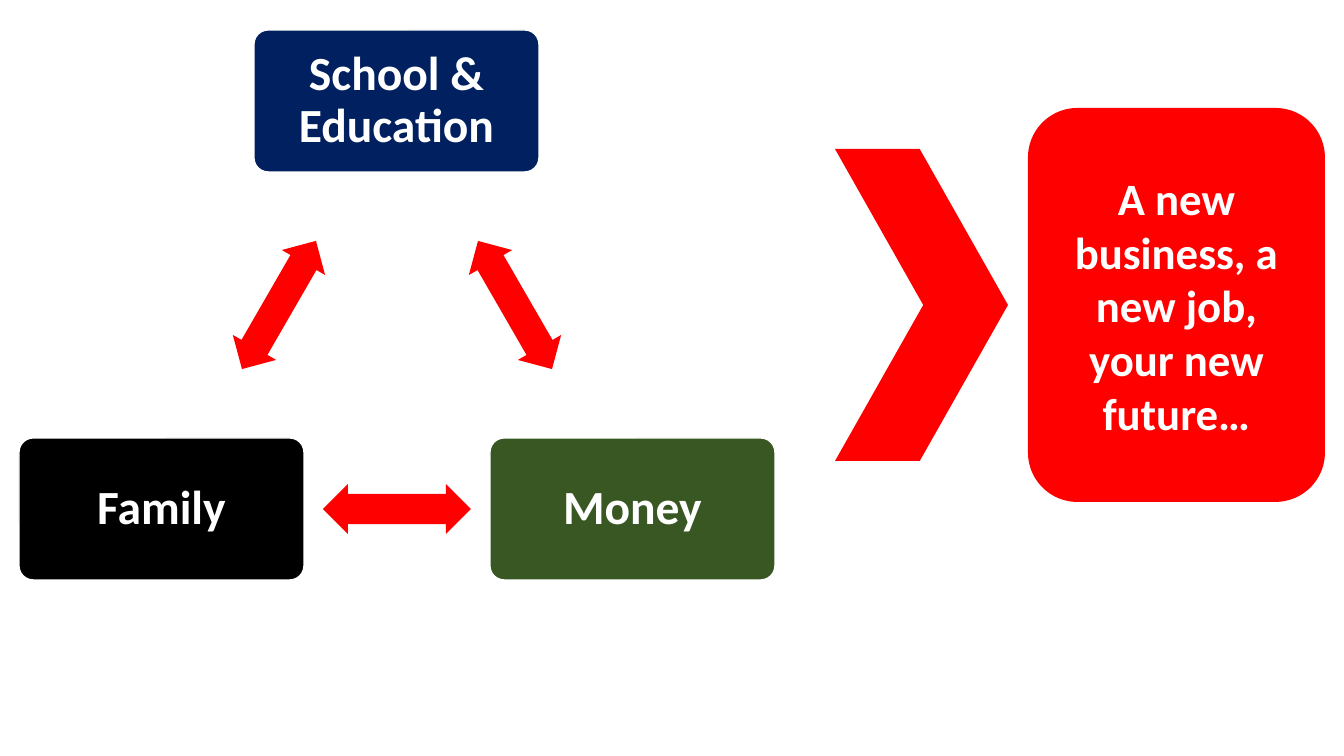
"""Build a slide where school, family and money lead to a new future."""
from pptx import Presentation
from pptx.dml.color import RGBColor
from pptx.enum.shapes import MSO_SHAPE
from pptx.enum.text import MSO_ANCHOR, PP_ALIGN
from pptx.util import Pt

SCALE = 914400 / 100.8
WHITE = RGBColor(255, 255, 255)
RED = RGBColor(255, 0, 0)
NAVY = RGBColor(0, 32, 96)
GREEN = RGBColor(56, 87, 35)
BLACK = RGBColor(0, 0, 0)


def emu(px):
    """Turn pixels into EMU."""
    return round(px * SCALE)


def add_form(slide, kind, area, fill, adjust=()):
    """Add a plain filled shape."""
    form = slide.shapes.add_shape(kind, *map(emu, area))
    form.shadow.inherit = False
    form.fill.solid()
    form.fill.fore_color.rgb = fill
    form.line.fill.background()
    for index, value in enumerate(adjust):
        form.adjustments[index] = value
    return form


def add_label(form, text, size, inset, spacing):
    """Write bold white centred text in a shape."""
    frame = form.text_frame
    frame.word_wrap = True
    frame.vertical_anchor = MSO_ANCHOR.MIDDLE
    frame.margin_left = frame.margin_right = emu(inset)
    frame.margin_top = frame.margin_bottom = emu(inset)
    para = frame.paragraphs[0]
    para.alignment = PP_ALIGN.CENTER
    para.line_spacing = spacing
    run = para.add_run()
    run.text = text
    run.font.name = "Calibri"
    run.font.size = Pt(size)
    run.font.bold = True
    run.font.color.rgb = WHITE


def add_topic(slide, left, top, fill, text):
    """Add one corner of the cycle."""
    area = (left, top, 285, 142)
    form = add_form(slide, MSO_SHAPE.ROUNDED_RECTANGLE, area, fill, [0.1])
    form.line.color.rgb = WHITE
    form.line.width = Pt(1)
    add_label(form, text, 34, 14, 0.9)


def add_arrow(slide, left, top, angle):
    """Add a turned double arrow."""
    area = (left, top, 148, 50)
    form = add_form(slide, MSO_SHAPE.LEFT_RIGHT_ARROW, area, RED, [0.6, 0.5])
    form.rotation = angle


def main():
    """Draw and save the slide."""
    deck = Presentation()
    deck.slide_width, deck.slide_height = emu(1344), emu(756)
    slide = deck.slides.add_slide(deck.slide_layouts[6])
    for topic in (
        (254, 30, NAVY, "School & Education"),
        (490, 438, GREEN, "Money"),
        (19, 438, BLACK, "Family"),
    ):
        add_topic(slide, *topic)
    for arrow in ((441, 280, 60), (323, 484, 180), (205, 280, 300)):
        add_arrow(slide, *arrow)
    add_form(slide, MSO_SHAPE.CHEVRON, (835, 149, 173, 312), RED, [0.51])
    goal = add_form(slide, MSO_SHAPE.ROUNDED_RECTANGLE, (1028, 108, 297, 394), RED)
    add_label(goal, "A new business, a new job, your new future…", 32, 10, 1.0)
    deck.save("out.pptx")


if __name__ == "__main__":
    main()
